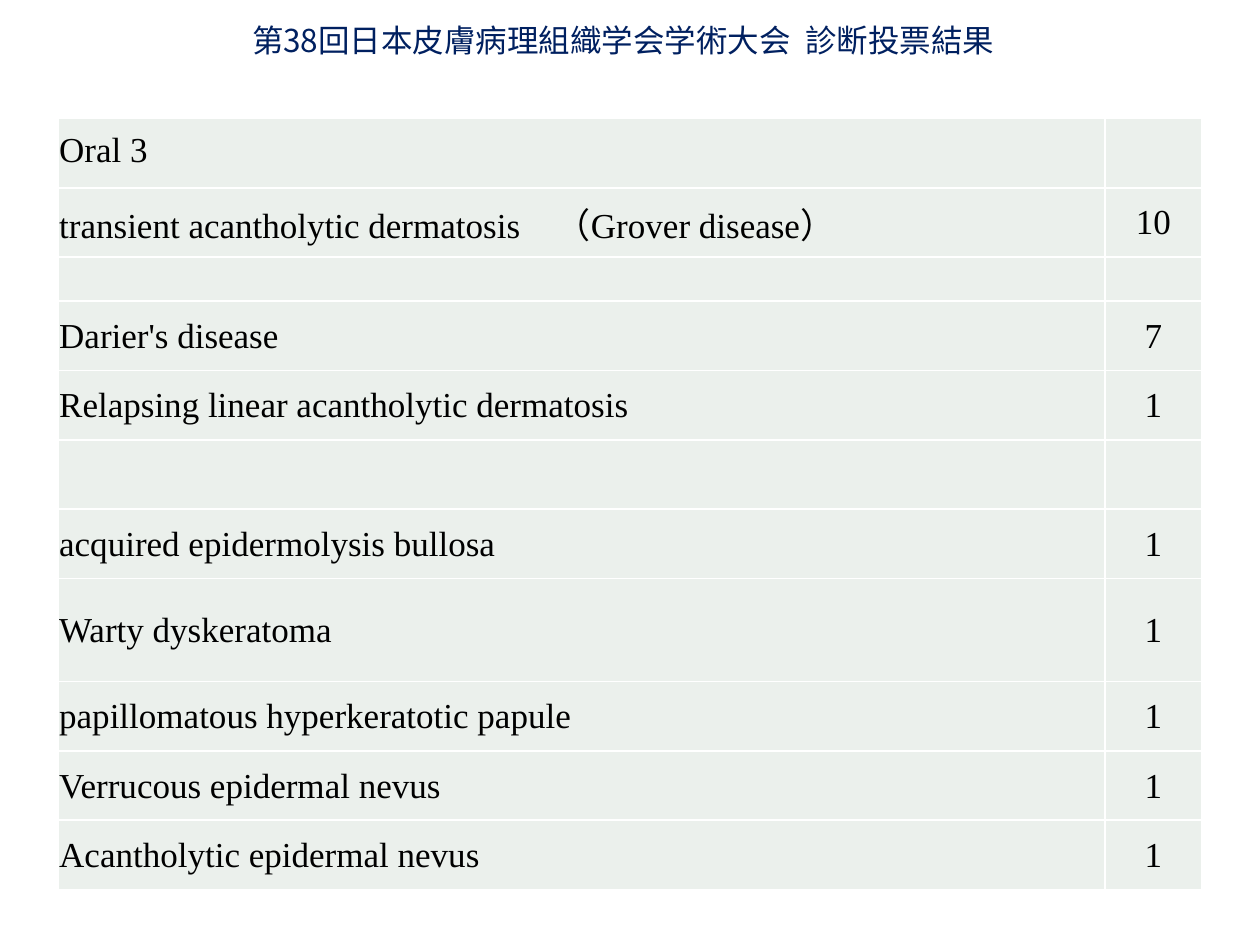
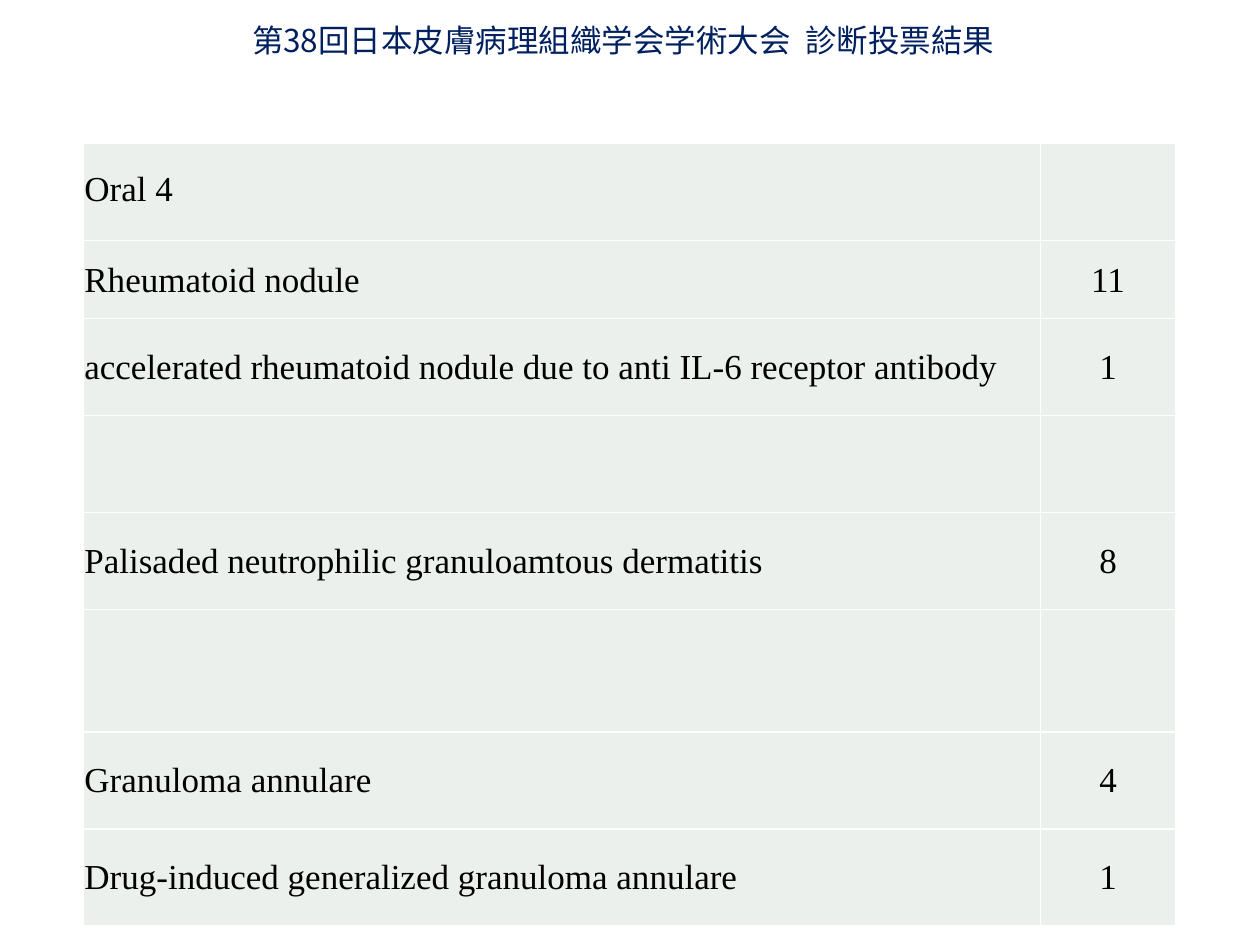
"""Builds the diagnosis vote slides, one table of answers and counts each."""
import pptx
import pptx.util
import pptx.dml.color
import pptx.enum.text
import pptx.oxml
import pptx.oxml.ns

Inches = pptx.util.Inches
Pt = pptx.util.Pt
ALIGN = pptx.enum.text.PP_ALIGN
ANCHOR = pptx.enum.text.MSO_ANCHOR

NAVY, BLACK, PALE, WHITE = "002060", "000000", "EBF0EC", "FFFFFF"
HEAD = "第38回日本皮膚病理組織学会学術大会  診断投票結果"
HEAD_FONT = {"name": "Noto Sans CJK JP", "size": Pt(18), "bold": False}
CELL_FONT = {"name": "Times New Roman", "size": Pt(20), "bold": False}
HEAD_BOX = {"left": Inches(1.9), "top": Inches(0.12),
            "width": Inches(6.2), "height": Inches(0.4)}
HEAD_FRAME = {"word_wrap": True, "vertical_anchor": ANCHOR.TOP,
              "auto_size": pptx.enum.text.MSO_AUTO_SIZE.NONE}
CELL_FRAME = {"vertical_anchor": ANCHOR.MIDDLE, "margin_left": Inches(0.01),
              "margin_right": Inches(0.01), "margin_top": Inches(0.01)}
PLAIN = {"first_row": False, "horz_banding": False}

VOTES = [
    {"left": 0.46, "top": 0.94, "cols": [8.31, 0.77], "rows": [
        ("Oral 3", "", 0.55),
        ("transient acantholytic dermatosis　（Grover disease）", "10", 0.55),
        ("", "", 0.35),
        ("Darier's disease", "7", 0.55),
        ("Relapsing linear acantholytic dermatosis", "1", 0.55),
        ("", "", 0.55),
        ("acquired epidermolysis bullosa", "1", 0.55),
        ("Warty dyskeratoma", "1", 0.82),
        ("papillomatous hyperkeratotic papule", "1", 0.55),
        ("Verrucous epidermal nevus", "1", 0.55),
        ("Acantholytic epidermal nevus", "1", 0.55)]},
    {"left": 0.66, "top": 1.14, "cols": [7.6, 1.07], "rows": [
        ("Oral 4", "", 0.77),
        ("Rheumatoid nodule", "11", 0.62),
        ("accelerated rheumatoid nodule due to anti IL-6 receptor antibody",
         "1", 0.77),
        ("", "", 0.77),
        ("Palisaded neutrophilic granuloamtous dermatitis", "8", 0.77),
        ("", "", 0.97),
        ("Granuloma annulare", "4", 0.77),
        ("Drug-induced generalized granuloma annulare", "1", 0.77)]},
]


def style(item, values):
    """Set each attribute of item named in values."""
    for key, value in values.items():
        setattr(item, key, value)


def paint(color, code):
    """Give a colour format the hex colour code."""
    color.rgb = pptx.dml.color.RGBColor.from_string(code)


def write(frame, text, font, code, align):
    """Fill the first paragraph of a frame with one styled run."""
    para = frame.paragraphs[0]
    para.alignment = align
    run = para.add_run()
    run.text = text
    style(run.font, font)
    paint(run.font.color, code)
    return run


def add_head(slide):
    """Place the shared title."""
    title = slide.shapes.title
    style(title, HEAD_BOX)
    style(title.text_frame, HEAD_FRAME)
    run = write(title.text_frame, HEAD, HEAD_FONT, NAVY, ALIGN.LEFT)
    east = pptx.oxml.ns.qn("a:ea")
    run.font._element.makeelement(east)
    run.font._element.append(
        run.font._element.makeelement(east, {"typeface": HEAD_FONT["name"]}))


def add_edge(cell):
    """Draw a thin white line on all four sides of a cell."""
    props = cell._tc.get_or_add_tcPr()
    for spot, side in enumerate("LRTB"):
        props.insert(spot, pptx.oxml.parse_xml(
            f'<a:ln{side} {pptx.oxml.ns.nsdecls("a")} w="{Pt(1)}"><a:solidFill>'
            f'<a:srgbClr val="{WHITE}"/></a:solidFill></a:ln{side}>'))


def add_cell(cell, text, align, base):
    """Fill and write one cell, with base as its bottom margin."""
    style(cell, CELL_FRAME)
    cell.margin_bottom = Inches(base)
    cell.fill.solid()
    paint(cell.fill.fore_color, PALE)
    add_edge(cell)
    write(cell.text_frame, text, CELL_FONT, BLACK, align)


def add_votes(slide, left, top, cols, rows):
    """Place a table of answers and their vote counts."""
    high = sum(row[-1] for row in rows)
    table = slide.shapes.add_table(
        len(rows), len(cols), Inches(left), Inches(top),
        Inches(sum(cols)), Inches(high)).table
    style(table, PLAIN)
    for col, wide in zip(table.columns, cols):
        col.width = Inches(wide)
    for index, (answer, count, tall) in enumerate(rows):
        table.rows[index].height = Inches(tall)
        base = 0 if index else 0.05
        add_cell(table.cell(index, 0), answer, ALIGN.LEFT, base)
        add_cell(table.cell(index, 1), count, ALIGN.CENTER, base)


def main():
    """Build and save the deck."""
    deck = pptx.Presentation()
    style(deck, {"slide_width": Inches(10), "slide_height": Inches(7.5)})
    for vote in VOTES:
        slide = deck.slides.add_slide(deck.slide_layouts[5])
        add_head(slide)
        add_votes(slide, **vote)
    deck.save("out.pptx")


if __name__ == "__main__":
    main()
